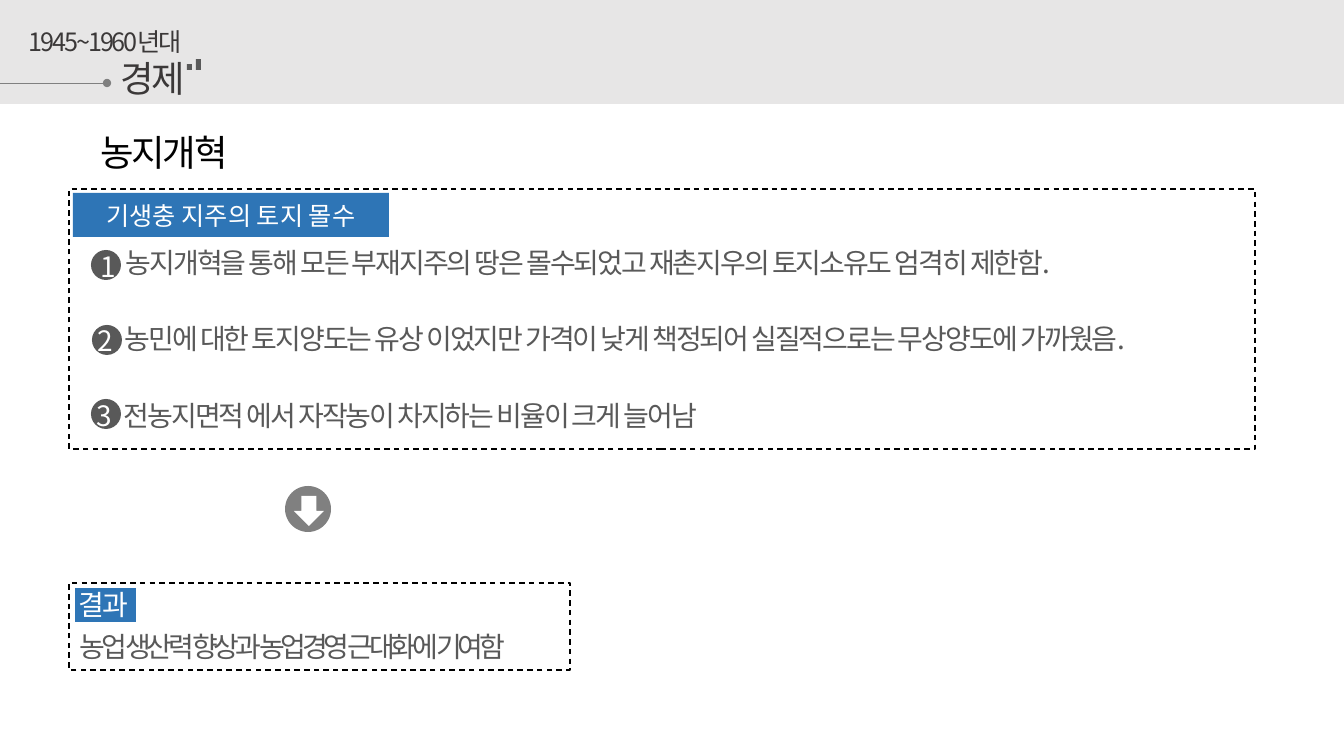
from dataclasses import dataclass

from pptx import Presentation
from pptx.dml.color import RGBColor
from pptx.enum.dml import MSO_LINE
from pptx.enum.shapes import MSO_CONNECTOR, MSO_SHAPE
from pptx.enum.text import MSO_ANCHOR, MSO_AUTO_SIZE, PP_ALIGN
from pptx.oxml.ns import qn
from pptx.util import Emu, Pt
from lxml.etree import SubElement


@dataclass(frozen=True)
class Theme:
    font: str = "Noto Sans CJK KR"
    band: str = "E7E6E6"
    heading: str = "3B3838"
    body: str = "595959"
    accent: str = "2E75B6"
    mid_gray: str = "808080"
    black: str = "000000"
    white: str = "FFFFFF"
    title_size: int = 26
    body_size: int = 20
    label_size: int = 18
    heading_leading: float = 19.5
    tight: float = -1.5
    tighter: float = -3


THEME = Theme()
PX = 914400 / 100.8

# Boxes are (left, top, width, height) in px.
PERIOD = ("1945~1960년대", (18, 24, 175, 67))
SUBJECT = ("경제", (107, 68, 92, 38))
TITLE = ("농지개혁", (34, 142, 260, 38))
BAND = (0, 0, 1344, 104)
TICKS = [(196, 59, 5, 11), (187, 64, 5, 6)]
LEAD_LINE = (0, 83, 107, 83)

REFORM_FRAME = (69, 189, 1186, 260)
REFORM_LABEL = ("기생충 지주의 토지 몰수", (73, 193, 316, 44))
# Sentence and its box, left and top of the disc, left and top of the number
FACTS = [
    ("농지개혁을 통해 모든 부재지주의 땅은 몰수되었고 재촌지우의 토지소유도 엄격히 제한함.",
     (116, 241, 1068, 44), (91, 250), (91, 245)),
    ("농민에 대한 토지양도는 유상 이었지만 가격이 낮게 책정되어 실질적으로는 무상양도에 가까웠음.",
     (115, 317, 1148, 44), (92, 325), (88, 319)),
    ("전농지면적 에서 자작농이 차지하는 비율이 크게 늘어남",
     (114, 394, 1117, 44), (91, 399), (87, 394)),
]
DISC = (30, 30)
NUMBER = (20, 44)

ARROW_DISC = (285, 486, 46, 46)
ARROW = (294, 496, 30, 30)

RESULT_FRAME = (69, 583, 501, 87)
RESULT_LABEL_BACK = (75, 588, 61, 34)
RESULT_LABEL = ("결과", (66, 589, 75, 38))
RESULT = ("농업 생산력 향상과 농업경영 근대화에 기여함", (70, 625, 531, 44))


def emu(lengths):
    return [Emu(round(length * PX)) for length in lengths]


def rgb(color):
    return RGBColor.from_string(color)


def add_block(page, box, color, kind=MSO_SHAPE.RECTANGLE):
    block = page.shapes.add_shape(kind, *emu(box))
    block.shadow.inherit = False
    block.fill.solid()
    block.fill.fore_color.rgb = rgb(color)
    block.line.fill.background()
    return block


def add_dashed_frame(page, box):
    frame = page.shapes.add_shape(MSO_SHAPE.RECTANGLE, *emu(box))
    frame.shadow.inherit = False
    frame.fill.background()
    frame.line.color.rgb = rgb(THEME.black)
    frame.line.width = Pt(1)
    frame.line.dash_style = MSO_LINE.DASH


def write(shape, text, size, color, spacing=0, centred=False, leading=None):
    """Put one styled paragraph in a shape; spacing is between letters, in points."""
    frame = shape.text_frame
    frame.word_wrap = True
    frame.text = text
    para = frame.paragraphs[0]
    para.alignment = PP_ALIGN.CENTER if centred else PP_ALIGN.LEFT
    if leading:
        para.line_spacing = Pt(leading)
    span = para.runs[0]
    span.font.name = THEME.font
    span.font.size = Pt(size)
    span.font.color.rgb = rgb(color)
    properties = span.font._element
    if spacing:
        properties.set("spc", str(round(spacing * 100)))
    SubElement(properties, qn("a:ea")).set("typeface", THEME.font)


def add_text(page, box, text, size, color, **style):
    text_box = page.shapes.add_textbox(*emu(box))
    write(text_box, text, size, color, **style)
    text_box.text_frame.auto_size = MSO_AUTO_SIZE.SHAPE_TO_FIT_TEXT
    return text_box


def add_heading(page, content, size, color):
    text, box = content
    add_text(page, box, text, size, color, spacing=THEME.tight,
             centred=True, leading=THEME.heading_leading)


def add_lead_line(page):
    line = page.shapes.add_connector(MSO_CONNECTOR.STRAIGHT, *emu(LEAD_LINE))
    line.line.color.rgb = rgb(THEME.mid_gray)
    line.line.width = Pt(0.5)
    SubElement(line.line._get_or_add_ln(), qn("a:tailEnd")).set("type", "oval")
    SubElement(line._element.spPr, qn("a:effectLst"))


def add_header(page):
    add_block(page, BAND, THEME.band)
    add_lead_line(page)
    add_heading(page, SUBJECT, THEME.title_size, THEME.heading)
    add_heading(page, PERIOD, THEME.label_size, THEME.heading)
    for tick in TICKS:
        add_block(page, tick, THEME.body)


def add_reform(page):
    text, box = REFORM_LABEL
    label = add_block(page, box, THEME.accent)
    write(label, text, THEME.label_size, THEME.white, centred=True)
    label.text_frame.vertical_anchor = MSO_ANCHOR.MIDDLE
    add_dashed_frame(page, REFORM_FRAME)
    for number, (fact, fact_box, disc_at, number_at) in enumerate(FACTS, 1):
        add_text(page, fact_box, fact, THEME.body_size, THEME.body, spacing=THEME.tight)
        add_block(page, disc_at + DISC, THEME.body, MSO_SHAPE.OVAL)
        digit = add_text(page, number_at + NUMBER, str(number), THEME.body_size, THEME.white)
        digit.text_frame.margin_right = 0


def add_result(page):
    add_block(page, RESULT_LABEL_BACK, THEME.accent)
    add_heading(page, RESULT_LABEL, THEME.body_size, THEME.white)
    add_dashed_frame(page, RESULT_FRAME)
    text, box = RESULT
    add_text(page, box, text, THEME.body_size, THEME.body, spacing=THEME.tighter)


def main():
    deck = Presentation()
    deck.slide_width, deck.slide_height = emu((1344, 756))
    page = deck.slides.add_slide(deck.slide_layouts[6])
    add_header(page)
    add_reform(page)
    add_heading(page, TITLE, THEME.title_size, THEME.black)
    add_block(page, ARROW_DISC, THEME.mid_gray, MSO_SHAPE.OVAL)
    add_block(page, ARROW, THEME.white, MSO_SHAPE.DOWN_ARROW)
    add_result(page)
    deck.save("out.pptx")


if __name__ == "__main__":
    main()
